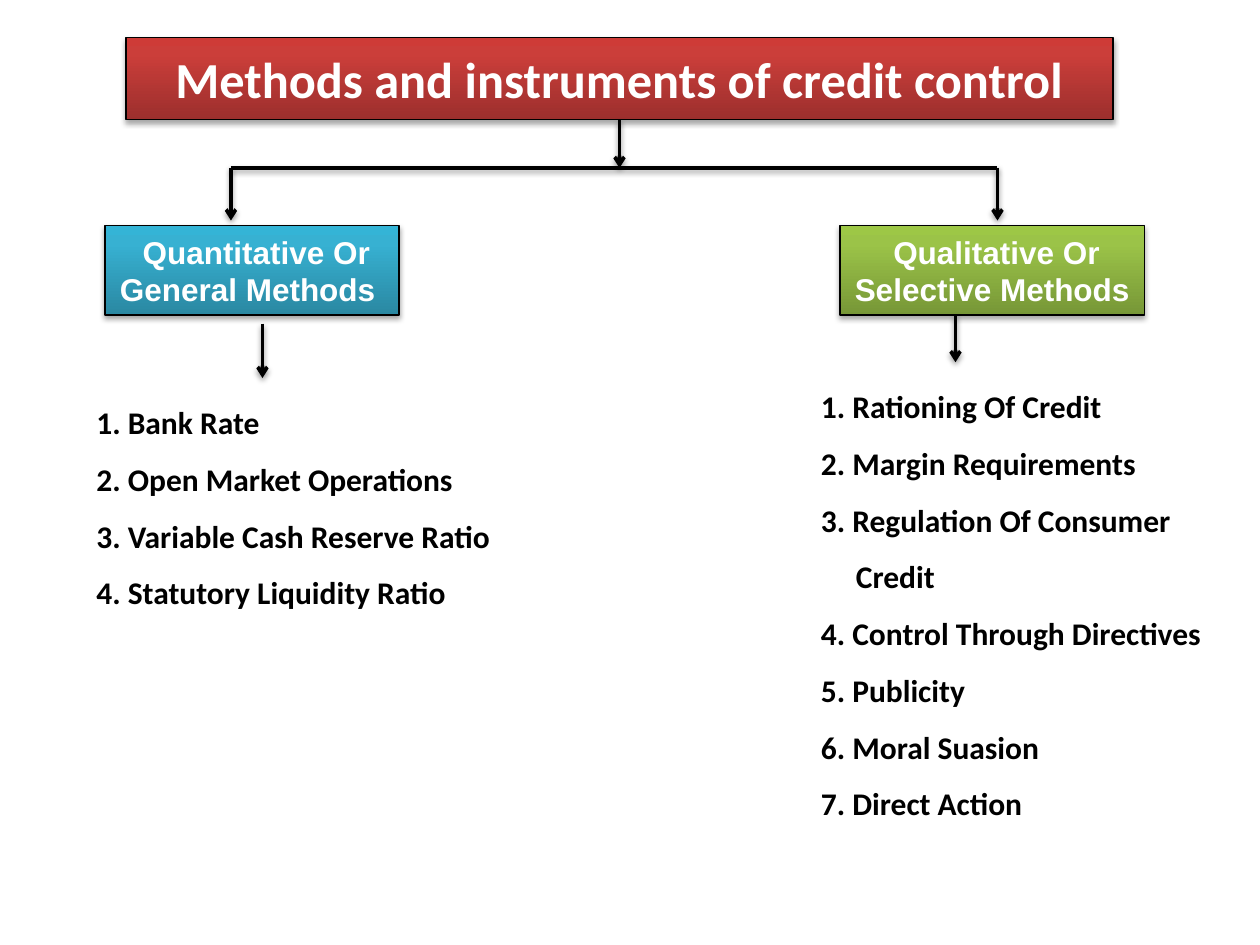
"""Build a slide that charts the methods and instruments of credit control."""
from dataclasses import dataclass

from pptx import Presentation
from pptx.dml.color import RGBColor
from pptx.enum.shapes import MSO_CONNECTOR, MSO_SHAPE
from pptx.enum.text import MSO_ANCHOR, PP_ALIGN
from pptx.oxml import parse_xml
from pptx.oxml.ns import nsdecls, qn
from pptx.util import Pt

COLORS = {"ink": "000000", "paper": "FFFFFF"}
GRADIENTS = {
    "red": ("9C2F2D", "CB3E3A", "CE3B37"),
    "blue": ("2A88A2", "37B1D2", "34B4D6"),
    "green": ("779737", "9BC348", "9DC746"),
}
STOPS = (0, 80, 100)
TITLE_BOTTOM, BRANCH_Y = 68.4, 96
TITLE_LEFT, TITLE_WIDTH = 72, 564
TRUNK_X = TITLE_LEFT + TITLE_WIDTH / 2
LIST_INDENT, CONTINUATION_INDENT = 36, 56


@dataclass
class Category:
    label: str
    gradient: str
    left: float
    width: float
    branch_x: float
    arrow: tuple[float, float, float]
    list_frame: tuple[float, float, float, float]
    list_indent: float
    methods: list[str]
    continuations: tuple[str, ...] = ()


CATEGORIES = [
    Category(" Quantitative Or General Methods ", "blue", 60, 168, 132,
             (150, 185, 216), (48, 216, 240, 168), 0,
             ["1. Bank Rate", "2. Open Market Operations",
              "3. Variable Cash Reserve Ratio", "4. Statutory Liquidity Ratio"]),
    Category(" Qualitative Or Selective Methods ", "green", 480, 174, 570,
             (546, 180, 207), (426, 207, 318, 331), LIST_INDENT,
             ["1. Rationing Of Credit", "2. Margin Requirements",
              "3. Regulation Of Consumer", "Credit",
              "4. Control Through Directives", "5. Publicity",
              "6. Moral Suasion", "7. Direct Action"], ("Credit",)),
]


def add_shadow(shape, opacity: int, distance: float) -> None:
    """Give a shape or connector a soft shadow straight below it."""
    shape._element.spPr.append(parse_xml(
        f'<a:effectLst {nsdecls("a")}><a:outerShdw blurRad="{Pt(3.1)}" '
        f'dist="{Pt(distance)}" dir="5400000" rotWithShape="0">'
        f'<a:srgbClr val="{COLORS["ink"]}"><a:alpha val="{opacity * 1000}"/>'
        '</a:srgbClr></a:outerShdw></a:effectLst>'))


def style_paragraph(para, font: str, size: float, color: str) -> None:
    """Format every run of a paragraph in bold."""
    for run in para.runs:
        run.font.name, run.font.size, run.font.bold = font, Pt(size), True
        run.font.color.rgb = RGBColor.from_string(COLORS[color])


def style_box(box, text: str, gradient: str, font: str, size: float) -> None:
    """Fill, outline, shade and label a heading box."""
    box.fill.gradient()
    box.fill.gradient_angle = 90
    stops = box._element.spPr.find(qn("a:gradFill")).find(qn("a:gsLst"))
    for stop in list(stops):
        stops.remove(stop)
    for position, color in zip(STOPS, GRADIENTS[gradient]):
        stops.append(parse_xml(f'<a:gs {nsdecls("a")} pos="{position * 1000}">'
                               f'<a:srgbClr val="{color}"/></a:gs>'))
    box.line.color.rgb = RGBColor.from_string(COLORS["ink"])
    box.line.width = Pt(0.75)
    add_shadow(box, 35, 1.8)
    frame = box.text_frame
    frame.word_wrap, frame.vertical_anchor = True, MSO_ANCHOR.MIDDLE
    frame.text = text
    para = frame.paragraphs[0]
    para.alignment = PP_ALIGN.CENTER
    style_paragraph(para, font, size, "paper")


def add_line(page, start: tuple[float, float], end: tuple[float, float], arrow: bool = True):
    """Draw a shadowed line, with an arrowhead at its end if wanted."""
    line = page.shapes.add_connector(
        MSO_CONNECTOR.STRAIGHT, *(Pt(value) for value in (*start, *end)))
    line.line.color.rgb = RGBColor.from_string(COLORS["ink"])
    line.line.width = Pt(2)
    if arrow:
        line.line._get_or_add_ln().append(
            parse_xml(f'<a:tailEnd {nsdecls("a")} type="arrow"/>'))
    add_shadow(line, 38, 1.6)
    return line


def add_method_list(page, category: Category) -> None:
    """Write the numbered methods of a category."""
    box = page.shapes.add_textbox(*(Pt(value) for value in category.list_frame))
    frame = box.text_frame
    frame.word_wrap = True
    frame.text = "\n".join(category.methods)
    for para in frame.paragraphs:
        para.line_spacing = 1.5
        continued = para.text in category.continuations
        indent = CONTINUATION_INDENT if continued else category.list_indent
        para._p.get_or_add_pPr().set("marL", str(Pt(indent)))
        style_paragraph(para, "Calibri", 18, "ink")


def add_category(page, category: Category) -> None:
    """Draw a branch with its heading box, arrow and list."""
    add_line(page, (category.branch_x, BRANCH_Y), (category.branch_x, 126))
    box = page.shapes.add_shape(MSO_SHAPE.RECTANGLE, Pt(category.left), Pt(129),
                                Pt(category.width), Pt(51))
    style_box(box, category.label, category.gradient, "Arial", 18)
    x, top, bottom = category.arrow
    add_line(page, (x, top), (x, bottom))
    add_method_list(page, category)


def main() -> None:
    """Create and save the deck."""
    deck = Presentation()
    deck.slide_width, deck.slide_height = Pt(720), Pt(540)
    page = deck.slides.add_slide(deck.slide_layouts[5])
    title = page.shapes.title
    title.left, title.top = Pt(TITLE_LEFT), Pt(21.6)
    title.width, title.height = Pt(TITLE_WIDTH), Pt(TITLE_BOTTOM - 21.6)
    style_box(title, "Methods and instruments of credit control", "red", "Calibri", 28.8)
    trunk = add_line(page, (TRUNK_X, TITLE_BOTTOM), (TRUNK_X, BRANCH_Y))
    trunk.begin_connect(title, 2)
    left, right = (category.branch_x for category in CATEGORIES)
    add_line(page, (left, BRANCH_Y), (right, BRANCH_Y), arrow=False)
    for category in CATEGORIES:
        add_category(page, category)
    deck.save("out.pptx")


if __name__ == "__main__":
    main()
